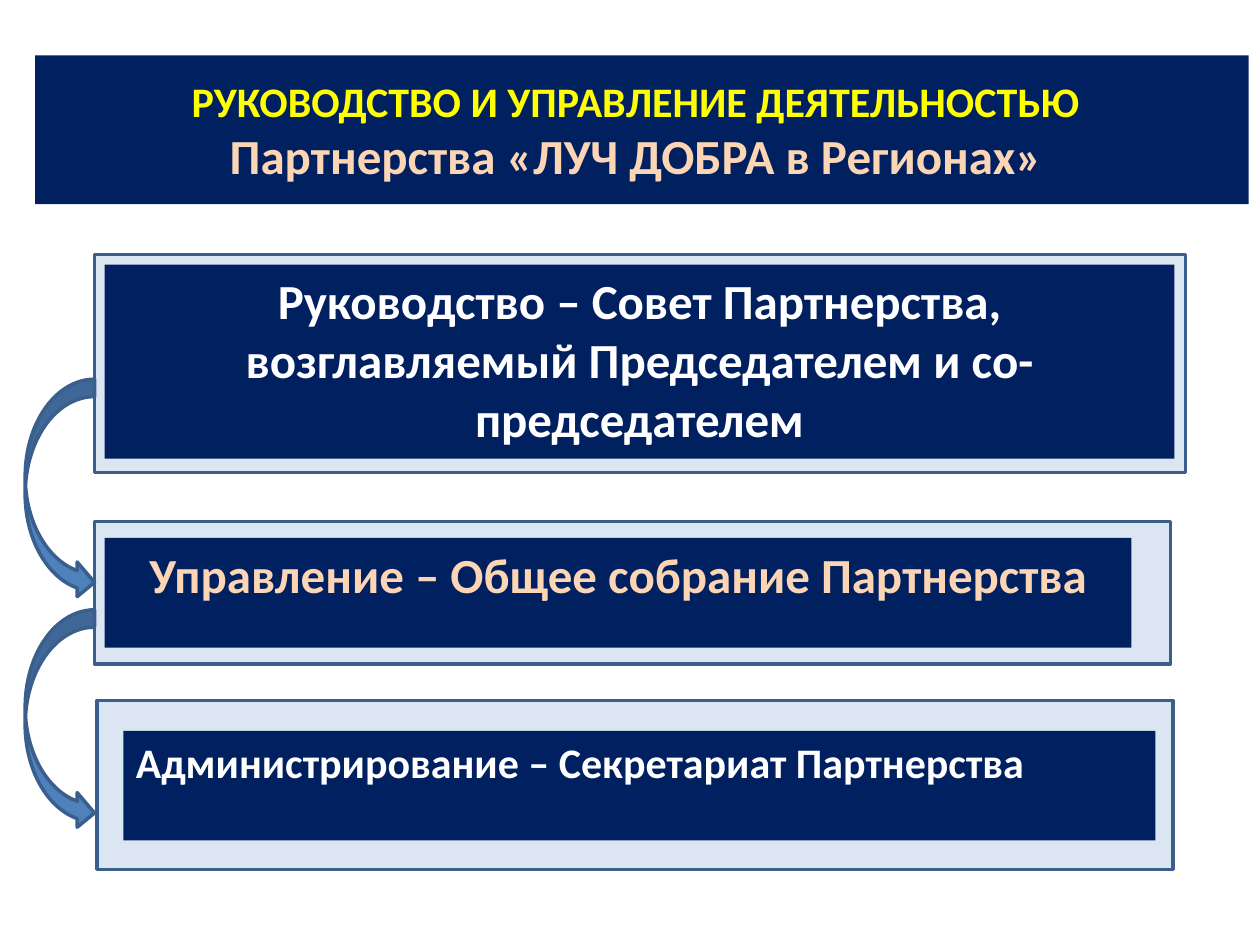
from pptx import Presentation
from pptx.dml.color import RGBColor
from pptx.enum import shapes, text
from pptx.util import Inches, Pt

NAVY, PALE, BLUE, EDGE = "002060", "DCE6F2", "4F81BD", "3A5F8C"
WHITE, YELLOW, PEACH = "FFFFFF", "FFFF00", "FCD5B5"

presentation = Presentation()
presentation.slide_width, presentation.slide_height = Inches(10), Inches(7.5)
slide = presentation.slides.add_slide(presentation.slide_layouts[6])


def add_box(box, fill, line=None, kind=shapes.MSO_SHAPE.RECTANGLE):
    shape = slide.shapes.add_shape(kind, *(Inches(length) for length in box))
    shape.shadow.inherit = False
    shape.fill.solid()
    shape.fill.fore_color.rgb = RGBColor.from_string(fill)
    if line:
        shape.line.color.rgb = RGBColor.from_string(line)
        shape.line.width = Pt(2)
    else:
        shape.line.fill.background()
    return shape


def write(paragraph, words, size=28, color=WHITE, align=text.PP_ALIGN.CENTER):
    paragraph.alignment = align
    run = paragraph.add_run()
    run.text = words
    run.font.name = "Calibri"
    run.font.size = Pt(size)
    run.font.bold = True
    run.font.color.rgb = RGBColor.from_string(color)


# Title band
title = add_box((0.28, 0.44, 9.63, 1.18), NAVY).text_frame
title.word_wrap = True
title.margin_right = Inches(0.2)
title.vertical_anchor = text.MSO_ANCHOR.MIDDLE
write(title.paragraphs[0], "РУКОВОДСТВО И УПРАВЛЕНИЕ ДЕЯТЕЛЬНОСТЬЮ", size=24, color=YELLOW)
write(title.add_paragraph(), "Партнерства «ЛУЧ ДОБРА в Регионах»", color=PEACH)

# Levels: outer frame, inner panel, wording, format
levels = [
    ((0.75, 2.02, 8.66, 1.73), (0.83, 2.1, 8.49, 1.54),
     "Руководство – Совет Партнерства, возглавляемый Председателем и со-председателем", {}),
    ((0.75, 4.14, 8.54, 1.13), (0.83, 4.27, 8.15, 0.87),
     "Управление – Общее собрание Партнерства", {"color": PEACH}),
    ((0.77, 5.56, 8.54, 1.34), (0.98, 5.8, 8.19, 0.87),
     "Администрирование – Секретариат Партнерства",
     {"size": 24, "align": text.PP_ALIGN.LEFT}),
]
for frame, panel, words, style in levels:
    add_box(frame, PALE, EDGE)
    panel_text = add_box(panel, NAVY).text_frame
    panel_text.word_wrap = True
    panel_text.vertical_anchor = text.MSO_ANCHOR.TOP
    write(panel_text.paragraphs[0], words, **style)

# Arrows from each level to the next
for top in (3.01, 4.84):
    add_box((0.2, top, 0.55, 1.75), BLUE, EDGE, shapes.MSO_SHAPE.CURVED_RIGHT_ARROW)

presentation.save("out.pptx")
